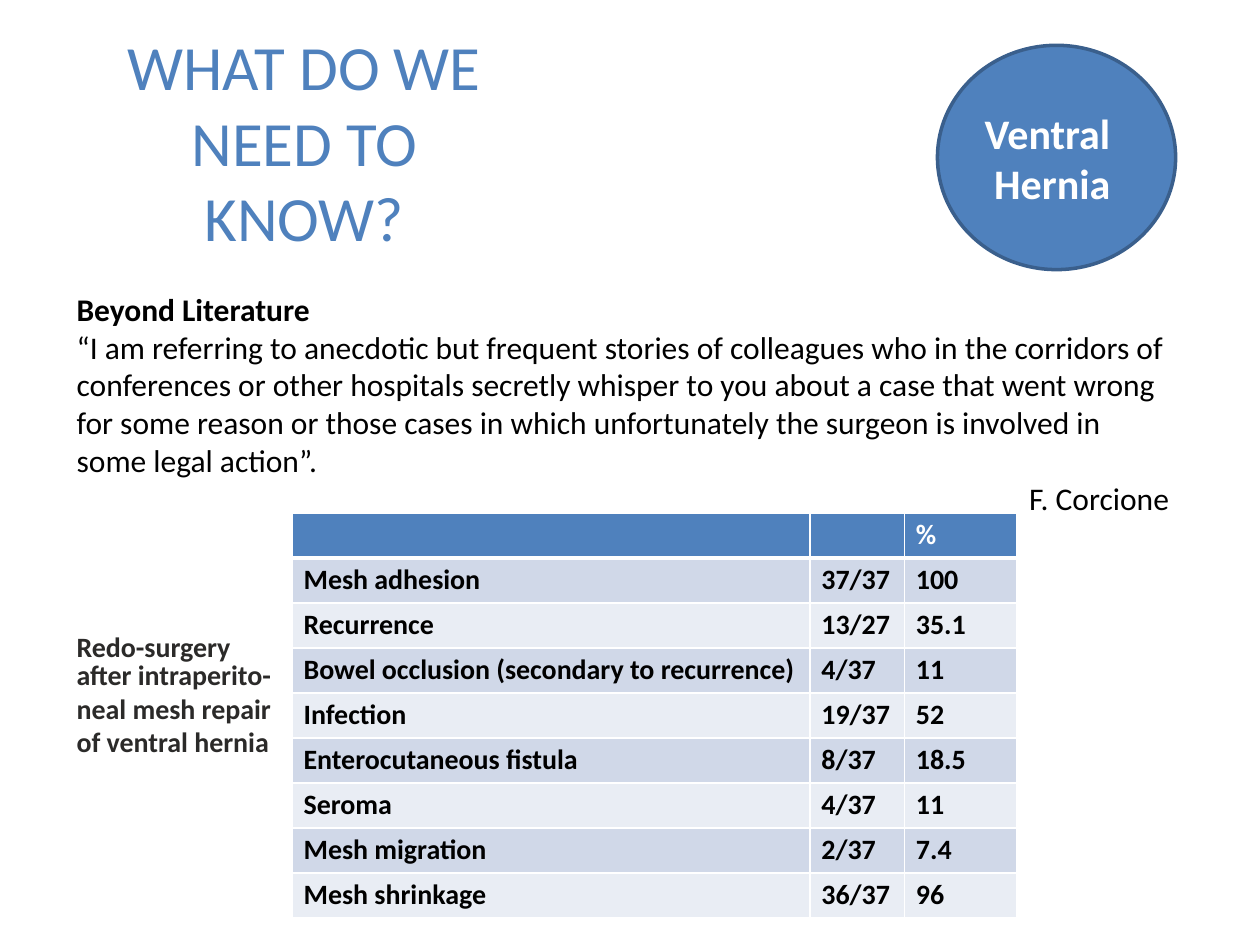
from lxml.etree import SubElement
from pptx import Presentation
from pptx.dml.color import RGBColor
from pptx.enum.shapes import MSO_SHAPE as SHAPE
from pptx.enum.text import MSO_ANCHOR as ANCHOR, MSO_AUTO_SIZE as FIT, PP_ALIGN as ALIGN
from pptx.oxml.ns import qn
from pptx.util import Inches, Pt

C = {"blue": "4F81BD", "outline": "3A5F8C", "white": "FFFFFF", "black": "000000",
     "gray": "2B2A29", "band_dark": "D0D8E8", "band_light": "E9EDF4"}


def write(tf, lines, size, color, bold=False, align=ALIGN.LEFT):
    for i, line in enumerate(lines):
        p = tf.paragraphs[0] if i == 0 else tf.add_paragraph()
        p.alignment = align
        r = p.add_run()
        r.text = line
        for name, value in {"name": "Calibri", "size": Pt(size), "bold": bold}.items():
            setattr(r.font, name, value)
        r.font.color.rgb = RGBColor.from_string(C[color])


def add_border(cell, side, width):
    ln = SubElement(cell._tc.get_or_add_tcPr(), qn(f"a:ln{side}"), w=str(Pt(width)))
    SubElement(SubElement(ln, qn("a:solidFill")), qn("a:srgbClr"), val=C["white"])


prs = Presentation()
prs.slide_width, prs.slide_height = Inches(10), Inches(7.5)
s = prs.slides.add_slide(prs.slide_layouts.get_by_name("Title Only"))

# Title
title = s.shapes.title
title.left, title.top, title.width, title.height = map(Inches, (0.9, 0.17, 3.03, 1.92))
tf = title.text_frame
for name, value in {"word_wrap": False, "auto_size": FIT.SHAPE_TO_FIT_TEXT,
                    "vertical_anchor": ANCHOR.TOP}.items():
    setattr(tf, name, value)
write(tf, ["WHAT DO WE", "NEED TO", "KNOW?"], 36, "blue", align=ALIGN.CENTER)

# Topic circle
sp = s.shapes.add_shape(SHAPE.OVAL, *map(Inches, (7.44, 0.36, 1.89, 1.78)))
sp.shadow.inherit = False
sp.fill.solid()
sp.fill.fore_color.rgb = RGBColor.from_string(C["blue"])
sp.line.color.rgb = RGBColor.from_string(C["outline"])
sp.line.width = Pt(2)
sp.text_frame.vertical_anchor = ANCHOR.MIDDLE
write(sp.text_frame, ["Ventral", " Hernia"], 24, "white", True)

# Quotation and table caption
quote = ["Beyond Literature",
         "“I am referring to anecdotic but frequent stories of colleagues who in the corridors of "
         "conferences or other hospitals secretly whisper to you about a case that went wrong",
         "for some reason or those cases in which unfortunately the surgeon is involved in",
         "some legal action”.",
         "F. Corcione"]
texts = [((0.51, 2.25, 9.21, 1.92), quote, 18, "black", False),
         ((0.51, 4.95, 1.52, 0.37), ["Redo-surgery"], 16, "gray", True),
         ((0.51, 5.17, 1.91, 0.91),
          ["after intraperito-neal mesh repair of ventral hernia"], 16, "gray", True)]
for box, lines, size, color, bold in texts:
    tf = s.shapes.add_textbox(*map(Inches, box)).text_frame
    tf.word_wrap = True
    tf.auto_size = FIT.SHAPE_TO_FIT_TEXT
    write(tf, lines, size, color, bold)
    if lines is quote:
        tf.paragraphs[0].runs[0].font.bold = True
        # Indent that places the author's name at the right
        tf.paragraphs[-1]._p.get_or_add_pPr().set("marL", str(Inches(7.56)))

# Complications table
rows = [("", "", "%"),
        ("Mesh adhesion", "37/37", "100"),
        ("Recurrence", "13/27", "35.1"),
        ("Bowel occlusion (secondary to recurrence)", "4/37", "11"),
        ("Infection", "19/37", "52"),
        ("Enterocutaneous fistula", "8/37", "18.5"),
        ("Seroma", "4/37", "11"),
        ("Mesh migration", "2/37", "7.4"),
        ("Mesh shrinkage", "36/37", "96")]
table = s.shapes.add_table(len(rows), 3, *map(Inches, (2.32, 4.07, 5.75, 3.22))).table
for col, width in zip(table.columns, (4.11, 0.75, 0.89)):
    col.width = Inches(width)
margins = {"margin_left": 0.09, "margin_right": 0.09, "margin_top": 0.04, "margin_bottom": 0.04}
for i, row in enumerate(rows):
    fill = "blue" if i == 0 else "band_dark" if i % 2 else "band_light"
    for j, text in enumerate(row):
        cell = table.cell(i, j)
        for name, value in margins.items():
            setattr(cell, name, Inches(value))
        for side in "LRTB":
            add_border(cell, side, 3 if (i, side) in ((0, "B"), (1, "T")) else 1)
        cell.fill.solid()
        cell.fill.fore_color.rgb = RGBColor.from_string(C[fill])
        if text:
            write(cell.text_frame, [text], 16, "black" if i else "white", True)
        else:
            SubElement(cell.text_frame.paragraphs[0]._p, qn("a:endParaRPr"), sz="1600")

prs.save("out.pptx")
